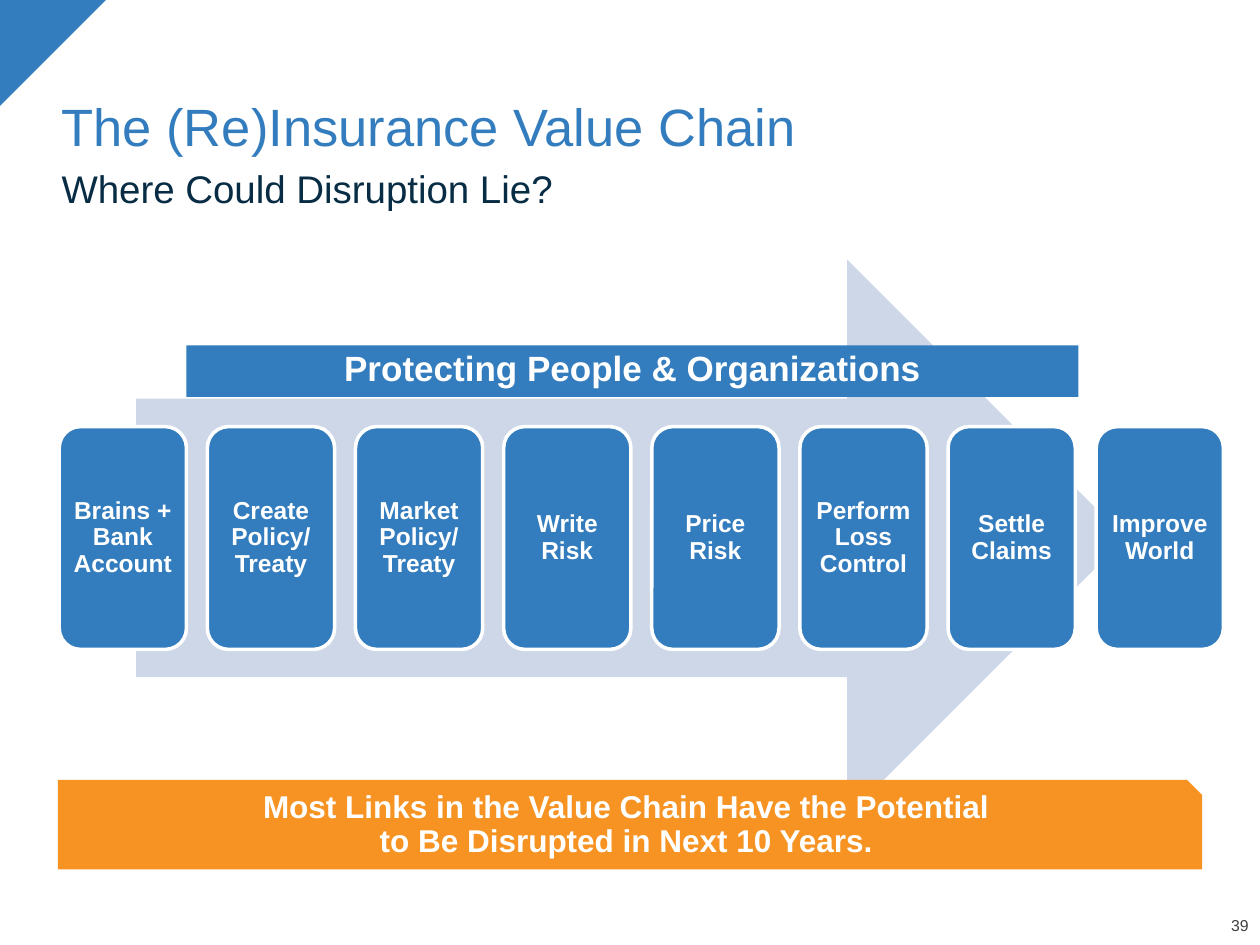
from dataclasses import dataclass

from pptx import Presentation
from pptx import util as u
from pptx.dml.color import RGBColor
from pptx.enum import shapes, text

COLUMNS, ROWS = 100, 75
SLIDE_WIDTH, SLIDE_HEIGHT = u.Inches(10), u.Inches(7.5)


@dataclass(frozen=True)
class Theme:
    font: str = "Arial"
    blue: str = "337DBE"
    navy: str = "072C44"
    pale: str = "CED7E8"
    orange: str = "F69322"
    white: str = "FFFFFF"
    grey: str = "404040"
    title: int = 30
    subtitle: int = 22
    banner: int = 20
    conclusion: int = 18
    link: int = 14
    page: int = 9


@dataclass(frozen=True)
class Box:
    """A region in grid columns and rows."""
    left: float
    top: float
    width: float
    height: float

    def emu(self):
        column, row = SLIDE_WIDTH / COLUMNS, SLIDE_HEIGHT / ROWS
        return (round(self.left * column), round(self.top * row),
                round(self.width * column), round(self.height * row))


THEME = Theme()
SHAPE = shapes.MSO_SHAPE
ALIGN = text.PP_ALIGN
ANCHOR = text.MSO_ANCHOR

LINKS = ["Brains + Bank Account", "Create Policy/ Treaty",
         "Market Policy/ Treaty", "Write Risk", "Price Risk",
         "Perform Loss Control", "Settle Claims", "Improve World"]


def write(holder, lines, size, color, bold=False, align=ALIGN.LEFT,
          anchor=ANCHOR.TOP, insets=(0.1, 0.05, 0.1, 0.05)):
    """Fill a shape with paragraphs; insets run left, top, right, bottom."""
    frame = holder.text_frame
    frame.word_wrap = True
    frame.vertical_anchor = anchor
    (frame.margin_left, frame.margin_top,
     frame.margin_right, frame.margin_bottom) = map(u.Inches, insets)
    frame.text = "\n".join(lines)
    for paragraph in frame.paragraphs:
        paragraph.alignment = align
        paragraph.line_spacing = 0.9
        paragraph.font.name = THEME.font
        paragraph.font.size = u.Pt(size)
        paragraph.font.bold = bold
        paragraph.font.color.rgb = RGBColor.from_string(color)


def add_text(slide, box, line, size, color, **layout):
    write(slide.shapes.add_textbox(*box.emu()), [line], size, color, **layout)


def add_block(slide, preset, box, fill, outline=None):
    block = slide.shapes.add_shape(preset, *box.emu())
    block.shadow.inherit = False
    block.fill.solid()
    block.fill.fore_color.rgb = RGBColor.from_string(fill)
    if outline:
        block.line.color.rgb = RGBColor.from_string(outline)
        block.line.width = u.Pt(2)
    else:
        block.line.fill.background()
    return block


def add_corner(slide, box):
    add_block(slide, SHAPE.RIGHT_TRIANGLE, box, THEME.blue).rotation = 90


def add_heading(slide, box):
    title_height = box.height * 0.71
    add_text(slide, Box(box.left, box.top, box.width, title_height),
             "The (Re)Insurance Value Chain", THEME.title, THEME.blue,
             anchor=ANCHOR.BOTTOM)
    add_text(slide, Box(box.left, box.top + title_height, box.width,
                        box.height - title_height),
             "Where Could Disruption Lie?", THEME.subtitle, THEME.navy)


def add_value_chain(slide, box):
    """Place the links in equal steps, centred on the arrow behind them."""
    arrow = Box(box.left + box.width * 0.066, box.top,
                box.width * 0.85, box.height)
    add_block(slide, SHAPE.RIGHT_ARROW, arrow, THEME.pale)
    link_width, link_height = 10.1, box.height * 0.4
    step = (box.width - link_width) / (len(LINKS) - 1)
    top = box.top + (box.height - link_height) / 2
    for index, name in enumerate(LINKS):
        link = add_block(slide, SHAPE.ROUNDED_RECTANGLE,
                         Box(box.left + index * step, top,
                             link_width, link_height),
                         THEME.blue, THEME.white)
        write(link, [name], THEME.link, THEME.white, bold=True,
              align=ALIGN.CENTER, anchor=ANCHOR.MIDDLE,
              insets=(0.06, 0.1, 0.06, 0.1))


def add_banner(slide, box):
    banner = add_block(slide, SHAPE.RECTANGLE, box, THEME.blue)
    write(banner, ["Protecting People & Organizations"], THEME.banner,
          THEME.white, bold=True, align=ALIGN.CENTER)


def add_conclusion(slide, box):
    conclusion = add_block(slide, SHAPE.SNIP_1_RECTANGLE, box, THEME.orange)
    write(conclusion, ["Most Links in the Value Chain Have the Potential",
                       "to Be Disrupted in Next 10 Years."],
          THEME.conclusion, THEME.white, bold=True, align=ALIGN.CENTER,
          anchor=ANCHOR.MIDDLE, insets=(0.1, 0.05, 0.1, 0.1))


def add_page_number(slide, box):
    add_text(slide, box, "39", THEME.page, THEME.grey, align=ALIGN.RIGHT,
             anchor=ANCHOR.BOTTOM, insets=(0, 0, 0, 0))


def main():
    deck = Presentation()
    deck.slide_width, deck.slide_height = SLIDE_WIDTH, SLIDE_HEIGHT
    slide = deck.slides.add_slide(deck.slide_layouts[6])
    add_corner(slide, Box(0, 0, 8.4, 8.4))
    add_page_number(slide, Box(94.3, 72.9, 4.8, 1.3))
    add_heading(slide, Box(3.9, 2.5, 92.5, 14.8))
    add_value_chain(slide, Box(4.7, 20.6, 92.4, 44.2))
    add_banner(slide, Box(14.8, 27.4, 70.8, 4.1))
    add_conclusion(slide, Box(4.6, 61.9, 90.8, 7.1))
    deck.save("out.pptx")


if __name__ == "__main__":
    main()
